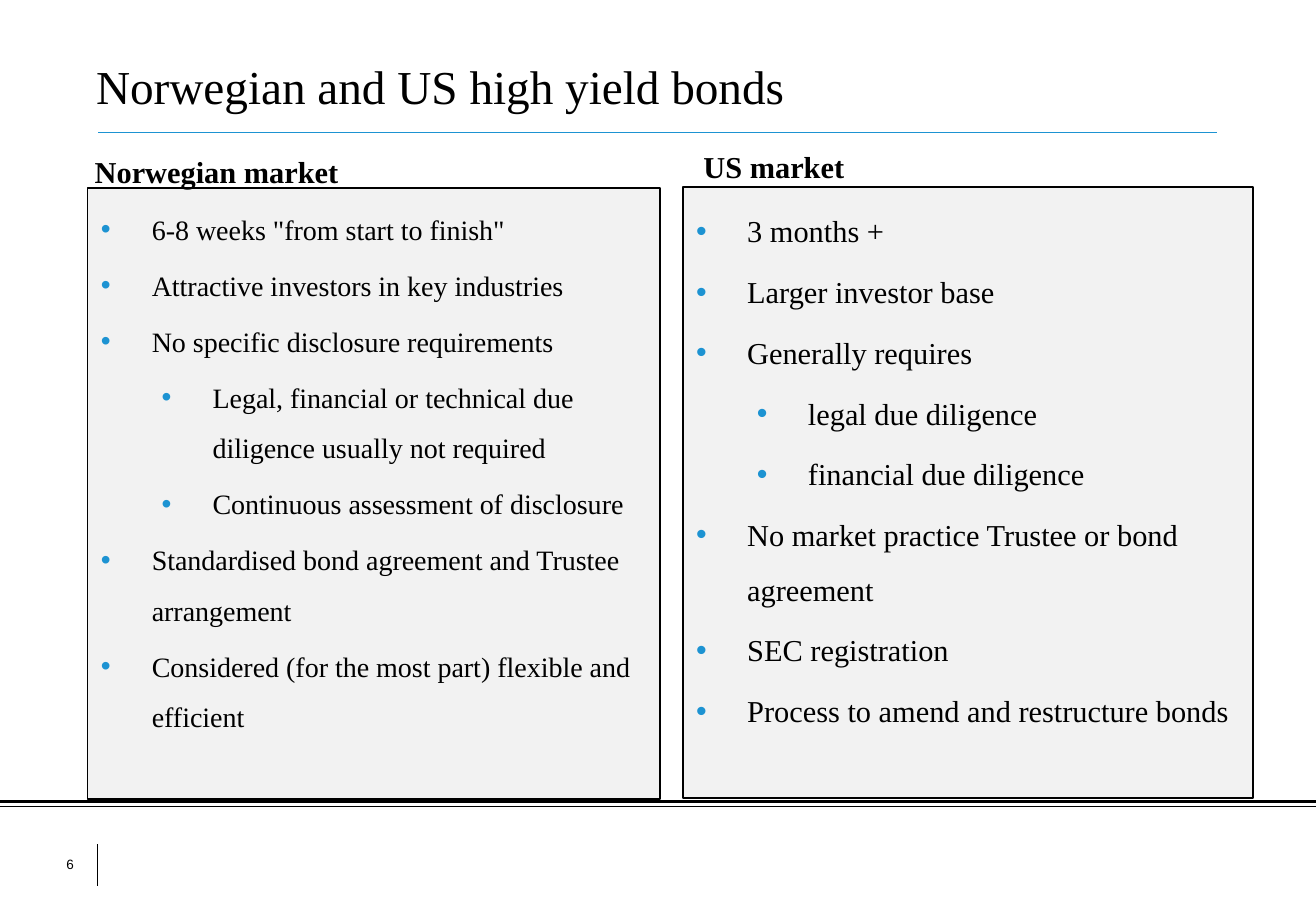
import pptx
import pptx.dml.color
import pptx.enum.shapes
import pptx.enum.text
import pptx.oxml.ns
import pptx.util
from lxml import etree

BLACK = pptx.dml.color.RGBColor(0x00, 0x00, 0x00)
BLUE = pptx.dml.color.RGBColor(0x1D, 0x93, 0xD2)
PANEL_GREY = pptx.dml.color.RGBColor(0xF2, 0xF2, 0xF2)

NORWEGIAN_POINTS = [
    (0, '6-8 weeks "from start to finish"'),
    (0, "Attractive investors in key industries"),
    (0, "No specific disclosure requirements"),
    (1, "Legal, financial or technical due diligence usually not required"),
    (1, "Continuous assessment of disclosure"),
    (0, "Standardised bond agreement and Trustee arrangement"),
    (0, "Considered (for the most part) flexible and efficient"),
]
US_POINTS = [
    (0, "3 months +"),
    (0, "Larger investor base"),
    (0, "Generally requires"),
    (1, "legal due diligence"),
    (1, "financial due diligence"),
    (0, "No market practice Trustee or bond agreement"),
    (0, "SEC registration"),
    (0, "Process to amend and restructure bonds"),
]


class MarketSlide:
    serif = "Times New Roman"
    sans = "Arial"
    hanging = 30.24
    level_step = 36
    line_spacing = 1.5
    space_share = 0.2

    def __init__(self, slide):
        self.slide = slide

    def place(self, box, left, top, width, height):
        box.left, box.top, box.width, box.height = map(
            pptx.util.Pt, (left, top, width, height))

    def frame(self, box, side=7.2, edge=3.6):
        frame = box.text_frame
        frame.word_wrap = True
        frame.auto_size = pptx.enum.text.MSO_AUTO_SIZE.NONE
        frame.vertical_anchor = pptx.enum.text.MSO_ANCHOR.TOP
        frame.margin_left = frame.margin_right = pptx.util.Pt(side)
        frame.margin_top = frame.margin_bottom = pptx.util.Pt(edge)
        return frame

    def add_words(self, paragraph, words, size, bold=False, font=None):
        run = paragraph.add_run()
        run.text = words
        run.font.name = font or self.serif
        run.font.size = pptx.util.Pt(size)
        run.font.bold = bold
        run.font.color.rgb = BLACK

    def rule(self, x1, y1, x2, y2, weight, color=BLACK):
        line = self.slide.shapes.add_connector(
            pptx.enum.shapes.MSO_CONNECTOR.STRAIGHT,
            *map(pptx.util.Pt, (x1, y1, x2, y2)))
        line.line.color.rgb = color
        line.line.width = pptx.util.Pt(weight)
        etree.SubElement(line._element.spPr, pptx.oxml.ns.qn("a:effectLst"))

    def title(self, words, *area):
        heading = self.slide.shapes.title
        self.place(heading, *area)
        paragraph = self.frame(heading).paragraphs[0]
        paragraph.alignment = pptx.enum.text.PP_ALIGN.LEFT
        self.add_words(paragraph, words, 28)

    def label(self, words, area, size=18, bold=True, font=None,
              align=pptx.enum.text.PP_ALIGN.LEFT):
        box = self.slide.shapes.add_textbox(*map(pptx.util.Pt, area))
        paragraph = self.frame(box).paragraphs[0]
        paragraph.alignment = align
        self.add_words(paragraph, words, size, bold, font)

    def bullet(self, paragraph, level):
        paragraph.level = level
        properties = paragraph._p.get_or_add_pPr()
        properties.set("marL", str(pptx.util.Pt(self.hanging + level * self.level_step)))
        properties.set("indent", str(-pptx.util.Pt(self.hanging)))
        tint = etree.SubElement(properties, pptx.oxml.ns.qn("a:buClr"))
        etree.SubElement(tint, pptx.oxml.ns.qn("a:srgbClr")).set("val", str(BLUE))
        etree.SubElement(properties, pptx.oxml.ns.qn("a:buChar")).set("char", "•")

    def panel(self, index, points, size, *area):
        panel = self.slide.placeholders[index]
        self.place(panel, *area)
        panel.fill.solid()
        panel.fill.fore_color.rgb = PANEL_GREY
        panel.line.color.rgb = BLACK
        panel.line.width = pptx.util.Pt(1)
        frame = self.frame(panel, 7.92, 4.32)
        for number, (level, words) in enumerate(points):
            paragraph = frame.add_paragraph() if number else frame.paragraphs[0]
            self.bullet(paragraph, level)
            paragraph.alignment = pptx.enum.text.PP_ALIGN.LEFT
            paragraph.line_spacing = self.line_spacing
            paragraph.space_before = pptx.util.Pt(size * self.space_share if number else 0)
            self.add_words(paragraph, words, size)


def main():
    deck = pptx.Presentation()
    deck.slide_width = pptx.util.Pt(779.76)
    deck.slide_height = pptx.util.Pt(540)
    market = MarketSlide(deck.slides.add_slide(deck.slide_layouts[3]))

    market.title("Norwegian and US high yield bonds", 49.7, 30.2, 691.2, 59.8)
    market.rule(58.3, 78.5, 721.4, 78.5, 0.75, BLUE)

    market.panel(1, NORWEGIAN_POINTS, 16.6, 51.8, 111.6, 339.1, 362.2)
    market.panel(2, US_POINTS, 18, 404.6, 110.9, 337.7, 362.2)
    market.label("Norwegian market", (49, 87.1, 265, 28.8))
    market.label("US market", (409.7, 84.2, 265, 28.8))

    market.rule(0, 475.2, 779.76, 475.2, 1.5)
    market.rule(0, 478.1, 779.76, 478.1, 0.25)
    market.rule(57.6, 500.4, 57.6, 524.9, 0.75)
    market.label("6", (23.5, 504, 27.4, 21.6), 8, False, market.sans,
                 pptx.enum.text.PP_ALIGN.RIGHT)

    deck.save("out.pptx")


if __name__ == "__main__":
    main()
